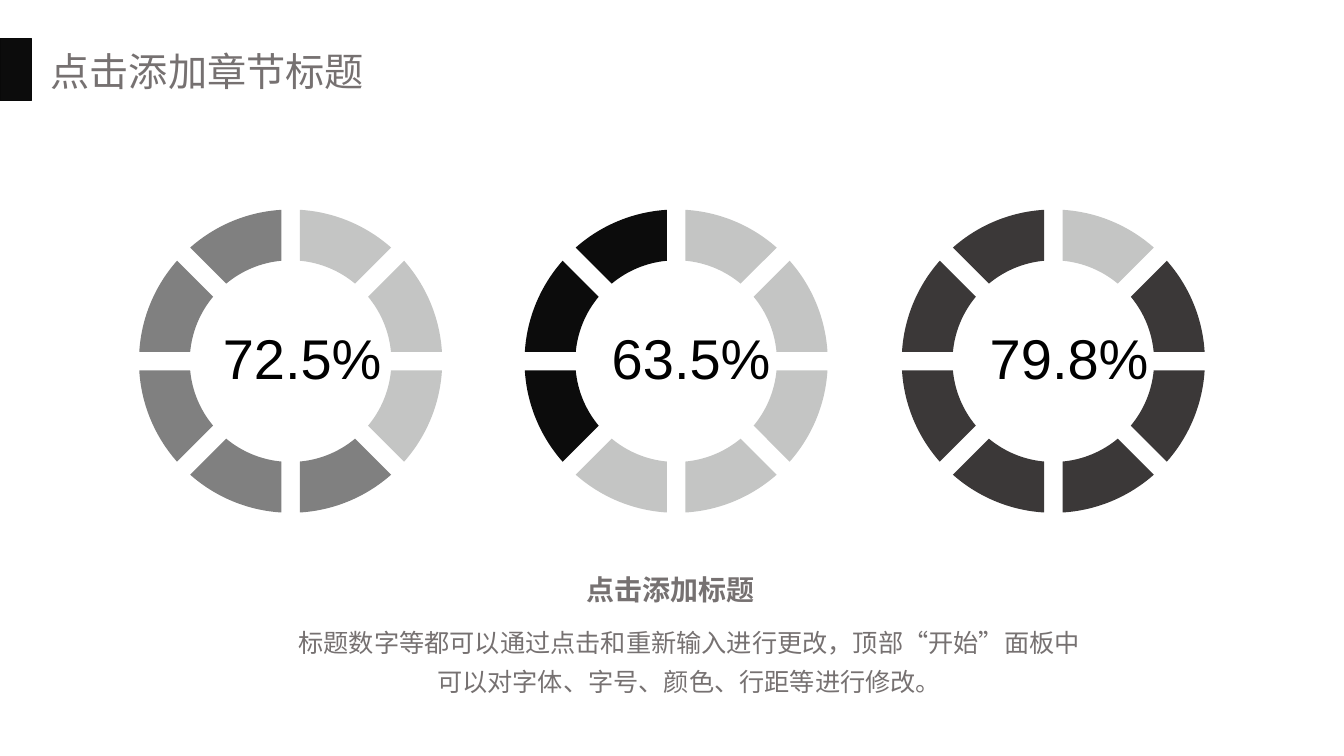
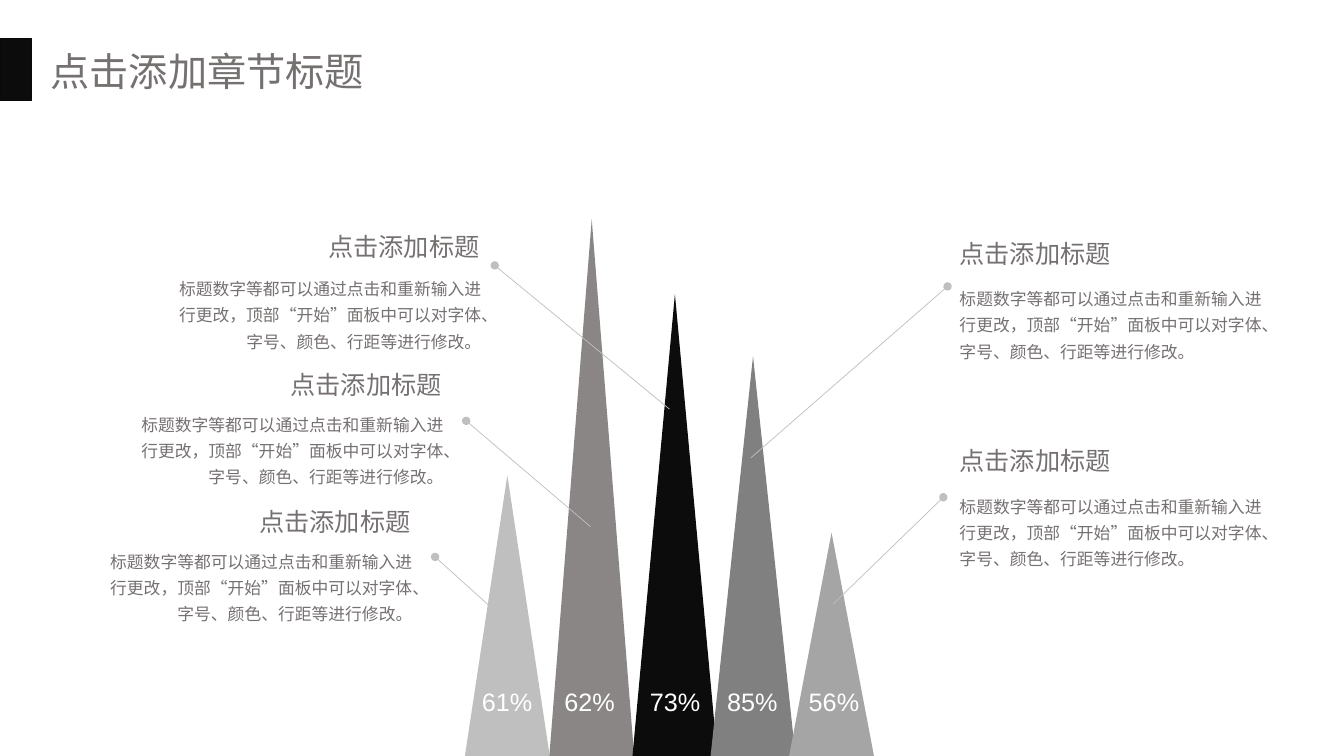
from dataclasses import dataclass
from math import asin, cos, pi, sin, tan

from lxml import etree
from pptx import Presentation, util as u
from pptx.dml.color import RGBColor
from pptx.enum import shapes, text
from pptx.oxml.ns import qn

# Grid: 160 columns by 90 rows of square cells
COLS, ROWS = 160, 90
CELL = u.Inches(7.5) / ROWS

INK, EDGE, GREY, PALE, WHITE = "0C0C0C", "090909", "767171", "C4C5C4", "FFFFFF"
WIRE = "BFBFBF"
CJK, SANS, BODY = "Noto Sans CJK SC", "Arial", "Calibri"
LEFT, MID, RIGHT = text.PP_ALIGN.LEFT, text.PP_ALIGN.CENTER, text.PP_ALIGN.RIGHT

TITLE = "点击添加章节标题"
HEAD = "点击添加标题"
COPY = ("标题数字等都可以通过点击和重新输入进行更改，顶部“开始”面板中"
        "可以对字体、字号、颜色、行距等进行修改。")


@dataclass
class Style:
    size: float
    face: str
    color: str = GREY
    bold: bool = False
    align: text.PP_ALIGN = LEFT
    wrap: bool = False
    lead: float = 1.0


@dataclass
class Ring:
    mid: float
    tag: float
    label: str
    color: str
    pale: int


@dataclass
class Spike:
    mid: float
    top: float
    tag: float
    label: str
    color: str


@dataclass
class Note:
    edge: float
    top: float
    drop: float
    align: text.PP_ALIGN


RINGS = [
    Ring(34.6, 25.35, "72.5%", "808080", 3),
    Ring(80.5, 71.65, "63.5%", INK, 5),
    Ring(125.4, 116.65, "79.8%", "3B3838", 1),
]
SPIKES = [
    Spike(60.4, 56.6, 56.2, "61%", "BFBFBF"),
    Spike(70.45, 26.1, 66, "62%", "8A8686"),
    Spike(80.35, 35, 76.2, "73%", INK),
    Spike(89.65, 42.4, 85.4, "85%", "808080"),
    Spike(99, 63.4, 95.1, "56%", "A5A5A5"),
]
WIRES = [
    (99.2, 71.9, 112.3, 59.2),
    (89.4, 54.5, 112.8, 34.1),
    (79.7, 48.7, 58.9, 31.6),
    (70.3, 62.7, 55.5, 50.1),
    (59.9, 73.6, 51.8, 66.3),
]
NOTES = [
    Note(113.05, 27.8, 5.3, LEFT),
    Note(113.05, 52.4, 5.4, LEFT),
    Note(58.3, 27, 4.9, RIGHT),
    Note(53.8, 43.4, 4.65, RIGHT),
    Note(50.1, 59.7, 4.65, RIGHT),
]


def cell(*nums: float) -> list[int]:
    return [round(n * CELL) for n in nums]


def rgb(code: str) -> RGBColor:
    return RGBColor.from_string(code)


def paint(shape, color: str) -> None:
    shape.shadow.inherit = False
    shape.fill.solid()
    shape.fill.fore_color.rgb = rgb(color)
    shape.line.fill.background()


def put(slide, words: str, box: tuple, style: Style) -> None:
    frame = slide.shapes.add_textbox(*cell(*box)).text_frame
    frame.word_wrap = style.wrap
    frame.auto_size = text.MSO_AUTO_SIZE.SHAPE_TO_FIT_TEXT
    para = frame.paragraphs[0]
    para.alignment, para.line_spacing = style.align, style.lead
    run = para.add_run()
    run.text = words
    form = {"size": u.Pt(style.size), "name": style.face, "bold": style.bold}
    for key, val in form.items():
        setattr(run.font, key, val)
    run.font.color.rgb = rgb(style.color)
    etree.SubElement(run.font._element, qn("a:ea"), typeface=CJK)


def poly(slide, pts: list, color: str):
    first, *rest = [cell(*p) for p in pts]
    pen = slide.shapes.build_freeform(*first, scale=1.0)
    pen.add_line_segments(rest, close=True)
    shape = pen.convert_to_shape()
    paint(shape, color)
    return shape


def arc(mid: tuple, rad: float, gap: float, turn: int) -> list:
    """Bezier points clockwise along an eighth of a circle, clear of its edges."""
    trim = asin(gap / rad)
    start, end = turn * pi / 4 + trim, (turn + 1) * pi / 4 - trim
    pull = rad * 4 / 3 * tan((end - start) / 4)

    def spot(angle: float, shift: float) -> tuple:
        return (mid[0] + rad * sin(angle) + shift * cos(angle),
                mid[1] - rad * cos(angle) + shift * sin(angle))

    return [spot(start, 0), spot(start, pull), spot(end, -pull), spot(end, 0)]


def bend(shape, line, ctrl: list) -> None:
    """Turn a straight outline step into a curve with two control points."""
    line.tag = qn("a:cubicBezTo")
    for i, point in enumerate(ctrl):
        x, y = cell(*point)
        line.insert(i, line.makeelement(
            qn("a:pt"), {"x": str(x - shape.left), "y": str(y - shape.top)}))


def draw_ring(slide, ring: Ring) -> None:
    mid, gap = (ring.mid, 43), 1.1
    for turn in range(8):
        out = arc(mid, 18.05, gap, turn)
        back = arc(mid, 12, gap, turn)[::-1]
        shape = poly(slide, [out[0], out[3], back[0], back[3]],
                     PALE if turn < ring.pale else ring.color)
        steps = list(shape._element.iter(qn("a:lnTo")))
        bend(shape, steps[0], out[1:3])
        bend(shape, steps[2], back[1:3])
    put(slide, ring.label, (ring.tag, 37.9, 21.4, 9.2), Style(40, SANS, "000000"))


def draw_spike(slide, spike: Spike) -> None:
    half = 5.05
    poly(slide, [(spike.mid + half, ROWS), (spike.mid - half, ROWS),
                 (spike.mid, spike.top)], spike.color)
    put(slide, spike.label, (spike.tag, 81.1, 8.4, 4.8), Style(18, SANS, WHITE))


def draw_wire(slide, ends: tuple) -> None:
    wire = slide.shapes.add_connector(shapes.MSO_CONNECTOR.STRAIGHT, *cell(*ends))
    wire.line.color.rgb = rgb(WIRE)
    wire.line.width = u.Pt(0.5)
    etree.SubElement(wire.line._get_or_add_ln(), qn("a:tailEnd"), type="oval")
    etree.SubElement(wire._element.spPr, qn("a:effectLst"))


def draw_note(slide, note: Note) -> None:
    right = note.align == RIGHT
    wide, span, jut = 20.4, 39.6, 0.2
    head = note.edge - wide if right else note.edge
    body = note.edge + jut - span if right else note.edge
    put(slide, HEAD, (head, note.top, wide, 4.8), Style(18, CJK))
    put(slide, COPY, (body, note.top + note.drop, span, 10.6),
        Style(12, BODY, align=note.align, wrap=True, lead=1.3))


def new_slide(deck):
    slide = deck.slides.add_slide(deck.slide_layouts[6])
    bar = slide.shapes.add_shape(shapes.MSO_SHAPE.RECTANGLE,
                                 *cell(0, 4.6, 3.75, 7.35))
    paint(bar, INK)
    bar.line.color.rgb = rgb(EDGE)
    bar.line.width = u.Pt(1)
    put(slide, TITLE, (4.85, 5, 39.7, 6.8), Style(28, CJK))
    return slide


def main() -> None:
    deck = Presentation()
    deck.slide_width, deck.slide_height = cell(COLS, ROWS)

    # Rings
    slide = new_slide(deck)
    for ring in RINGS:
        draw_ring(slide, ring)
    put(slide, COPY, (33.7, 73, 96.7, 10.6),
        Style(18, CJK, align=MID, wrap=True, lead=1.3))
    put(slide, HEAD, (68.65, 67.6, 22.4, 5.2), Style(20, SANS, bold=True, align=MID))

    # Spikes
    slide = new_slide(deck)
    for draw, items in ((draw_spike, SPIKES), (draw_wire, WIRES), (draw_note, NOTES)):
        for item in items:
            draw(slide, item)

    deck.save("out.pptx")


if __name__ == "__main__":
    main()
